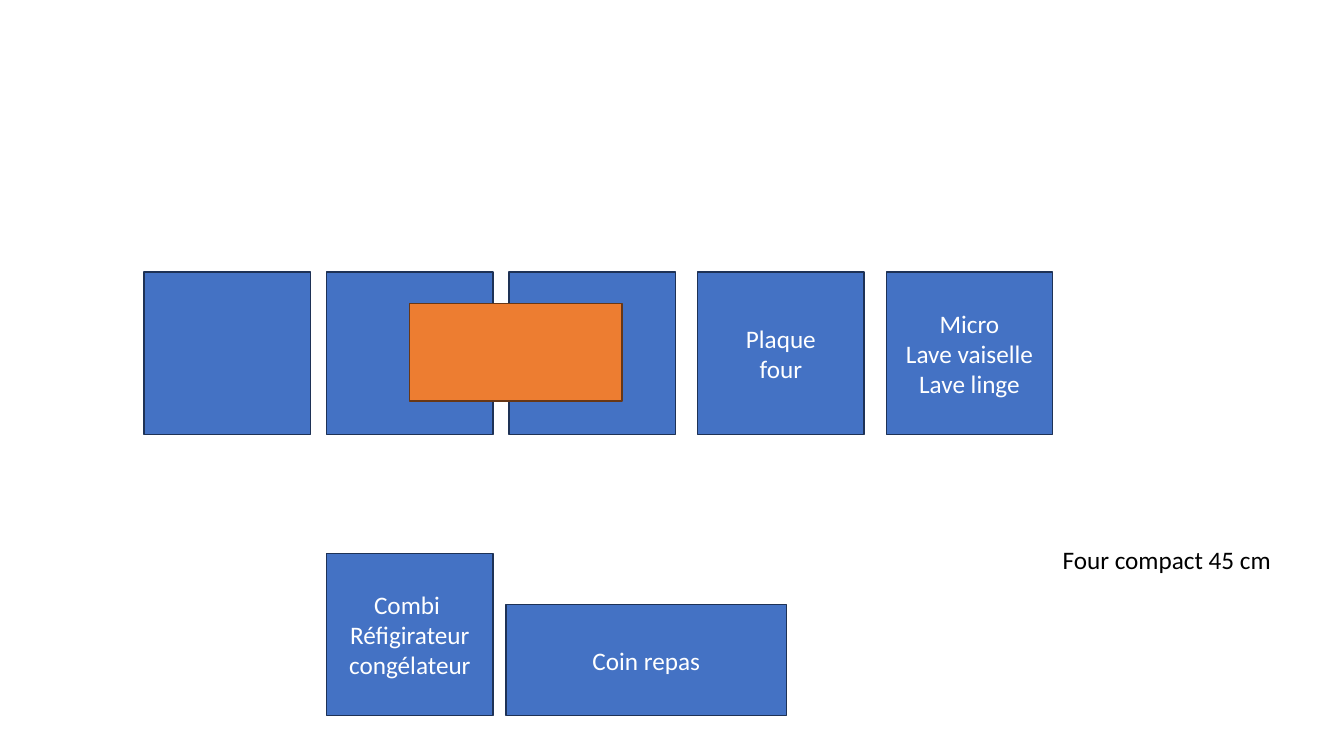
from pptx import Presentation
from pptx.dml.color import RGBColor
from pptx.enum.shapes import MSO_SHAPE
from pptx.enum.text import MSO_ANCHOR, MSO_AUTO_SIZE, PP_ALIGN
from pptx.util import Inches, Pt

BLUE = RGBColor(0x44, 0x72, 0xC4)
NAVY = RGBColor(0x1E, 0x32, 0x56)
ORANGE = RGBColor(0xED, 0x7D, 0x31)
BROWN = RGBColor(0x68, 0x37, 0x15)
WHITE = RGBColor(0xFF, 0xFF, 0xFF)
BLACK = RGBColor(0x00, 0x00, 0x00)

FONT = {"name": "Calibri", "size": Pt(18)}
UNIT_WIDTH, UNIT_HEIGHT = 1.65, 1.61
WORKTOP_TOP = 2.7

# Left edge and wording of each unit along the worktop
WORKTOP_UNITS = [
    (1.43, []),
    (3.24, []),
    (5.05, []),
    (6.92, ["Plaque", "four"]),
    (8.79, ["Micro", "Lave vaiselle", "Lave linge"]),
]


def write_lines(frame, lines, color, align):
    for index, line in enumerate(lines):
        para = frame.paragraphs[0] if index == 0 else frame.add_paragraph()
        para.alignment = align
        span = para.add_run()
        span.text = line
        for name, value in FONT.items():
            setattr(span.font, name, value)
        span.font.color.rgb = color


def add_block(page, left, top, width, height, lines=(), fill=BLUE, outline=NAVY):
    box = page.shapes.add_shape(MSO_SHAPE.RECTANGLE, Inches(left), Inches(top),
                                Inches(width), Inches(height))
    box.shadow.inherit = False
    box.fill.solid()
    box.fill.fore_color.rgb = fill
    box.line.color.rgb = outline
    box.line.width = Pt(1)
    box.text_frame.vertical_anchor = MSO_ANCHOR.MIDDLE
    write_lines(box.text_frame, lines, WHITE, PP_ALIGN.CENTER)


def add_note(page, left, top, width, height, line):
    box = page.shapes.add_textbox(Inches(left), Inches(top),
                                  Inches(width), Inches(height))
    box.text_frame.word_wrap = False
    box.text_frame.auto_size = MSO_AUTO_SIZE.SHAPE_TO_FIT_TEXT
    write_lines(box.text_frame, [line], BLACK, PP_ALIGN.LEFT)


def main():
    deck = Presentation()
    deck.slide_width, deck.slide_height = Inches(13.33), Inches(7.5)
    page = deck.slides.add_slide(deck.slide_layouts[6])

    # Worktop row, with the orange block across two units
    for left, lines in WORKTOP_UNITS:
        add_block(page, left, WORKTOP_TOP, UNIT_WIDTH, UNIT_HEIGHT, lines)
    add_block(page, 4.06, 3.01, 2.11, 0.97, fill=ORANGE, outline=BROWN)

    # Fridge and dining corner
    add_block(page, 3.24, 5.49, UNIT_WIDTH, UNIT_HEIGHT,
              ["Combi ", "Réfigirateur", "congélateur"])
    add_block(page, 5.02, 6, 2.78, 1.1, ["Coin repas"])

    # Side note
    add_note(page, 10.44, 5.35, 2.29, 0.4, "Four compact 45 cm")

    deck.save("out.pptx")


if __name__ == "__main__":
    main()
